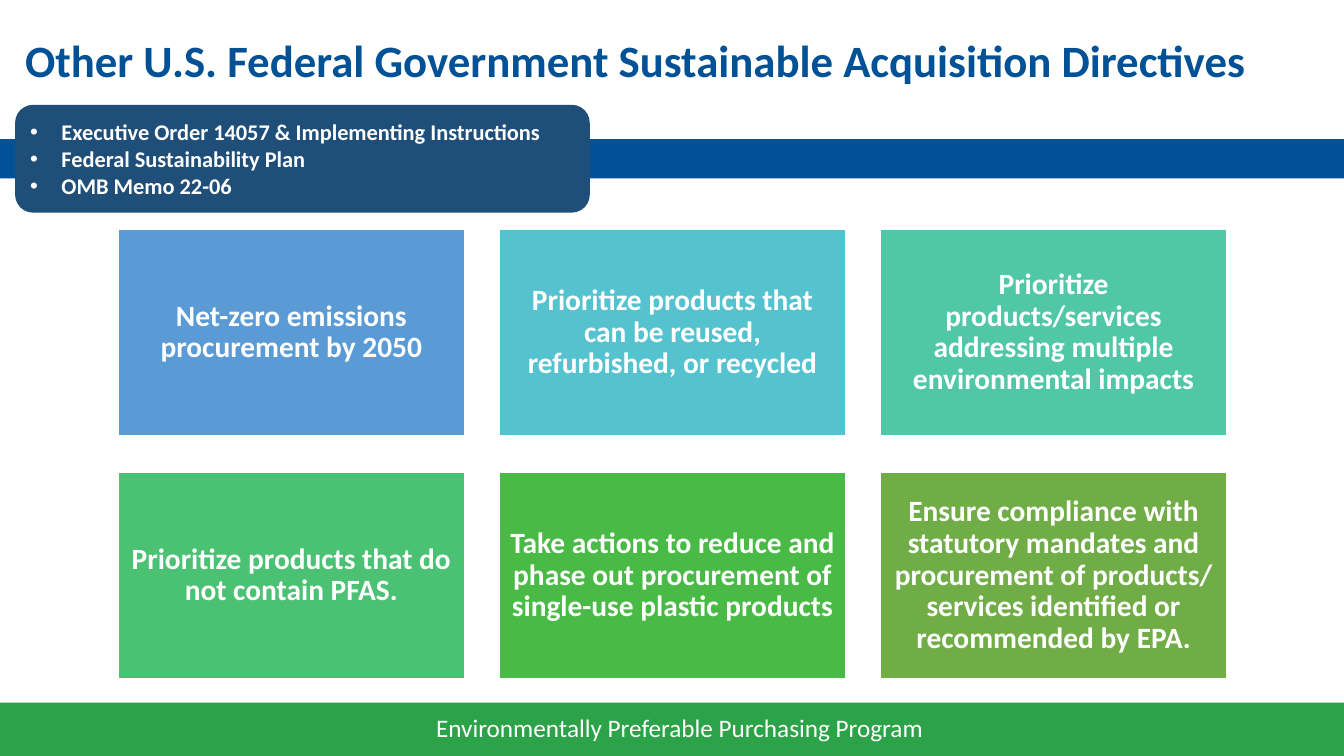
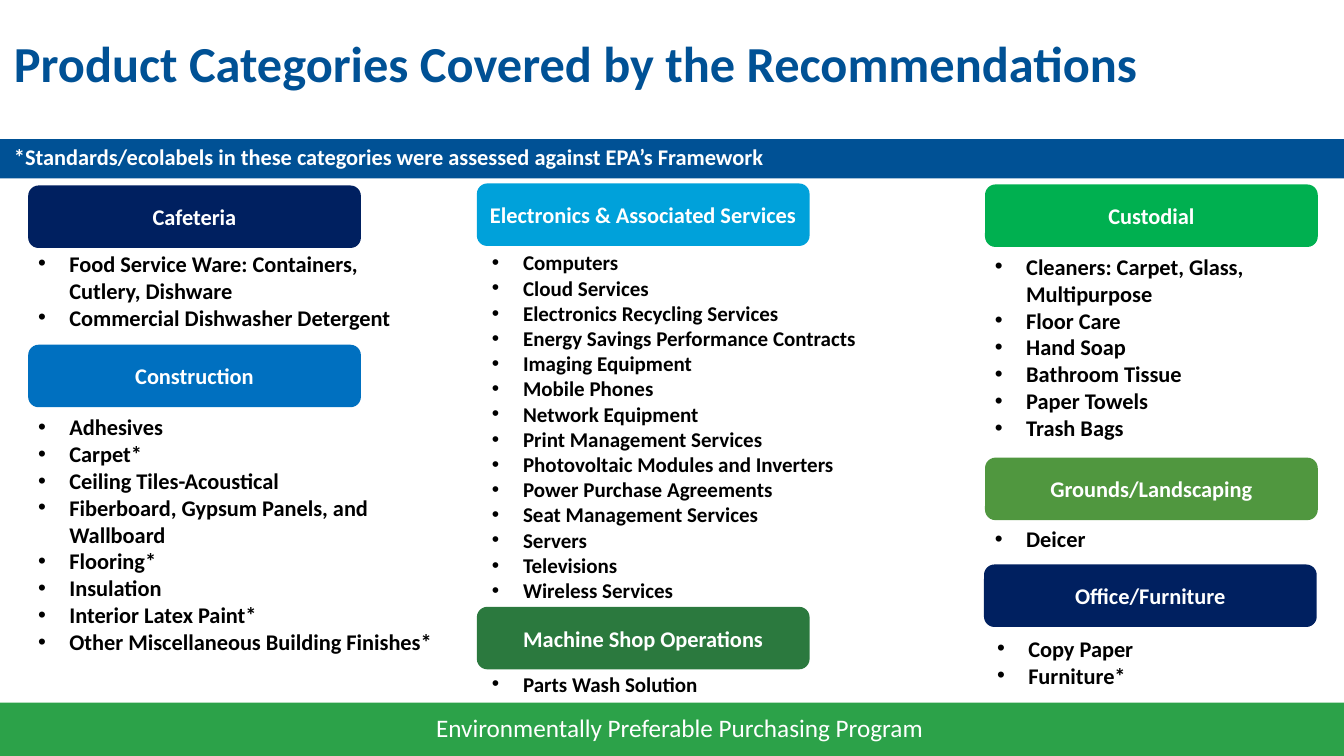
from dataclasses import dataclass

from lxml.etree import SubElement
from pptx import Presentation
from pptx.dml.color import RGBColor
from pptx.enum.shapes import MSO_SHAPE as SHAPE
from pptx.enum.text import MSO_ANCHOR as ANCHOR, PP_ALIGN as ALIGN
from pptx.oxml.ns import qn
from pptx.util import Inches, Pt

FONT = "Calibri"
COLORS = {
    "white": "FFFFFF", "black": "000000",
    "title": "005195", "footer": "2CA249", "directives": "1F4E79",
    "sky": "5B9BD5", "aqua": "55C3CF", "mint": "50C8A7",
    "jade": "4BC174", "grass": "4ABA46", "olive": "70AD47",
    "navy": "002060", "blue": "0070C0", "cyan": "00A1DA",
    "forest": "2B793E", "emerald": "00B050", "leaf": "50973F",
}
SLIDE_W, SLIDE_H = 13.33, 7.5
BAND_TOP, BAND_H = 1.38, 0.39
FOOTER_TOP = 6.97
BULLET_INDENT = 0.31
HEADER_W, HEADER_H = 3.3, 0.62


@dataclass
class Category:
    """A header at (left, top) with its product list in list_box."""
    name: str
    color: str
    left: float
    top: float
    list_box: tuple
    products: list
    size: int = 16


DIRECTIVES = [
    "Executive Order 14057 & Implementing Instructions",
    "Federal Sustainability Plan",
    "OMB Memo 22-06",
]
GOALS = [
    ("sky", "Net-zero emissions procurement by 2050"),
    ("aqua", "Prioritize products that can be reused, refurbished, or recycled"),
    ("mint", "Prioritize products/services addressing multiple environmental impacts"),
    ("jade", "Prioritize products that do not contain PFAS."),
    ("grass", "Take actions to reduce and phase out procurement of single-use plastic products"),
    ("olive", "Ensure compliance with statutory mandates and procurement of products/ "
              "services identified or recommended by EPA."),
]
CATEGORIES = [
    Category("Cafeteria", "navy", 0.28, 1.84, (0.28, 2.43, 4.05, 0.91), [
        "Food Service Ware: Containers, Cutlery, Dishware",
        "Commercial Dishwasher Detergent"]),
    Category("Construction", "blue", 0.28, 3.42, (0.28, 4.05, 4.27, 2.52), [
        "Adhesives", "Carpet*", "Ceiling Tiles-Acoustical",
        "Fiberboard, Gypsum Panels, and Wallboard", "Flooring*", "Insulation",
        "Interior Latex Paint*", "Other Miscellaneous Building Finishes*"]),
    Category("Electronics & Associated Services", "cyan", 4.73, 1.82,
             (4.78, 2.43, 4.53, 3.64), [
        "Computers", "Cloud Services", "Electronics Recycling Services",
        "Energy Savings Performance Contracts", "Imaging Equipment",
        "Mobile Phones", "Network Equipment", "Print Management Services",
        "Photovoltaic Modules and Inverters", "Power Purchase Agreements",
        "Seat Management Services", "Servers", "Televisions",
        "Wireless Services"], 15),
    Category("Machine Shop Operations", "forest", 4.73, 6.02,
             (4.78, 6.61, 3.28, 0.35), ["Parts Wash Solution"], 15),
    Category("Custodial", "emerald", 9.77, 1.83, (9.77, 2.46, 3.56, 1.99), [
        "Cleaners: Carpet, Glass, Multipurpose", "Floor Care", "Hand Soap",
        "Bathroom Tissue", "Paper Towels", "Trash Bags"]),
    Category("Grounds/Landscaping", "leaf", 9.77, 4.54,
             (9.77, 5.16, 3.04, 0.37), ["Deicer"]),
    Category("Office/Furniture", "navy", 9.76, 5.6, (9.79, 6.25, 2.68, 0.64),
             ["Copy Paper", "Furniture*"]),
]


def rgb(color):
    return RGBColor.from_string(COLORS[color])


def add_bullet(paragraph):
    props = paragraph._p.get_or_add_pPr()
    props.set("marL", str(Inches(BULLET_INDENT)))
    props.set("indent", str(-Inches(BULLET_INDENT)))
    SubElement(props, qn("a:buFont")).set("typeface", "Arial")
    SubElement(props, qn("a:buChar")).set("char", "•")


def write(shape, lines, size, color="white", bold=True, align=ALIGN.LEFT,
          spacing=None, bullets=False):
    frame = shape.text_frame
    frame.word_wrap = True
    for index, line in enumerate(lines):
        paragraph = frame.add_paragraph() if index else frame.paragraphs[0]
        paragraph.text = line
        paragraph.alignment = align
        if spacing:
            paragraph.line_spacing = spacing
        if bullets:
            add_bullet(paragraph)
        font = paragraph.font
        font.name, font.size, font.bold = FONT, Pt(size), bold
        font.color.rgb = rgb(color)


def add_text(slide, box, lines, size, **style):
    write(slide.shapes.add_textbox(*map(Inches, box)), lines, size, **style)


def add_block(slide, box, fill, kind=SHAPE.RECTANGLE):
    block = slide.shapes.add_shape(kind, *map(Inches, box))
    block.shadow.inherit = False
    block.fill.solid()
    block.fill.fore_color.rgb = rgb(fill)
    block.line.fill.background()
    block.text_frame.vertical_anchor = ANCHOR.MIDDLE
    return block


def add_framed_slide(deck, title, title_box, title_size):
    """Add a blank slide with the shared footer, band and title style."""
    slide = deck.slides.add_slide(deck.slide_layouts[6])
    add_block(slide, (0, FOOTER_TOP, SLIDE_W, SLIDE_H - FOOTER_TOP), "footer")
    add_block(slide, (0, BAND_TOP, SLIDE_W, BAND_H), "title")
    add_text(slide, (4.04, FOOTER_TOP + 0.05, 5.4, 0.4),
             ["Environmentally Preferable Purchasing Program"], 18,
             bold=False, align=ALIGN.CENTER)
    add_text(slide, title_box, [title], title_size, color="title", spacing=0.9)
    return slide


def add_goal_grid(slide, box, columns=3, rows=2, gap_x=0.34, gap_y=0.35):
    left, top, width, height = box
    card_w = (width - gap_x * (columns - 1)) / columns
    card_h = (height - gap_y * (rows - 1)) / rows
    for index, (color, goal) in enumerate(GOALS):
        row, column = divmod(index, columns)
        card = add_block(slide, (left + column * (card_w + gap_x),
                                 top + row * (card_h + gap_y), card_w, card_h), color)
        card.line.color.rgb = rgb("white")
        card.line.width = Pt(1.5)
        frame = card.text_frame
        frame.margin_left = frame.margin_right = Inches(0.09)
        frame.margin_top = frame.margin_bottom = Inches(0.09)
        write(card, [goal], 21, align=ALIGN.CENTER, spacing=0.9)


def add_category(slide, category):
    header = add_block(slide, (category.left, category.top, HEADER_W, HEADER_H),
                       category.color, SHAPE.ROUNDED_RECTANGLE)
    write(header, [category.name], 16, align=ALIGN.CENTER)
    add_text(slide, category.list_box, category.products, category.size,
             color="black", bullets=True)


def add_directives_slide(deck):
    slide = add_framed_slide(
        deck, "Other U.S. Federal Government Sustainable Acquisition Directives",
        (0.15, 0.34, 13.03, 0.59), 32)
    directives = add_block(slide, (0.15, 1.04, 5.7, 1.07), "directives",
                           SHAPE.ROUNDED_RECTANGLE)
    write(directives, DIRECTIVES, 16, bullets=True)
    add_goal_grid(slide, (1.17, 2.27, 11, 4.47))


def add_categories_slide(deck):
    slide = add_framed_slide(
        deck, "Product Categories Covered by the Recommendations",
        (0.04, 0.34, 13.26, 0.65), 36)
    add_text(slide, (0.04, 1.37, 11.6, 0.37),
             ["*Standards/ecolabels in these categories were assessed against "
              "EPA’s Framework"], 16)
    for category in CATEGORIES:
        add_category(slide, category)


def main():
    deck = Presentation()
    deck.slide_width, deck.slide_height = Inches(SLIDE_W), Inches(SLIDE_H)
    add_directives_slide(deck)
    add_categories_slide(deck)
    deck.save("out.pptx")


if __name__ == "__main__":
    main()
